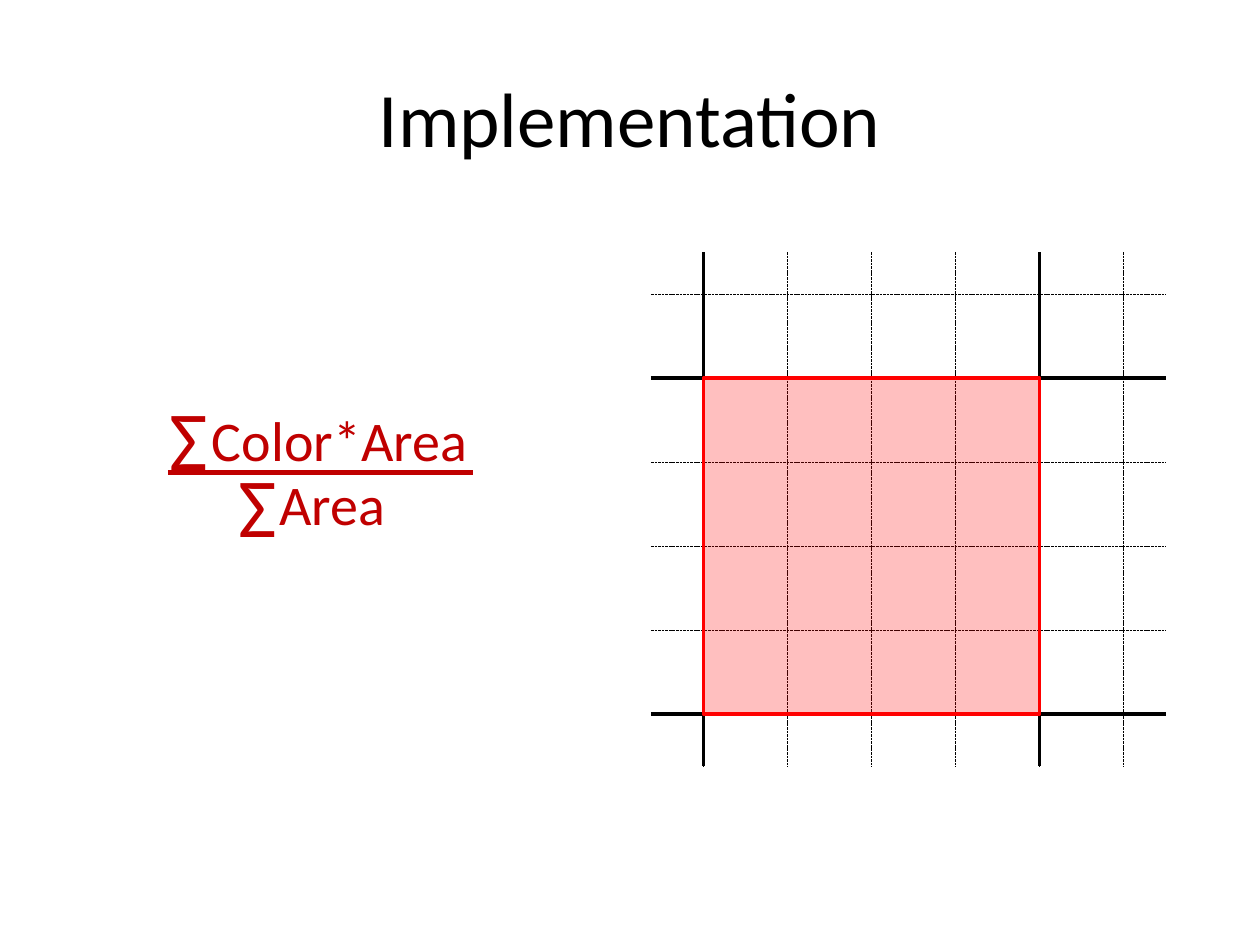
import pptx
import pptx.dml.color
import pptx.enum.dml
import pptx.enum.shapes
import pptx.enum.text
import pptx.oxml
import pptx.oxml.ns
import pptx.util

Pt = pptx.util.Pt
BLACK, RED, DARK_RED = "000000", "FF0000", "C00000"
LEFT, TOP, SPAN = 372, 144, 294
CELL, COUNT = 48, 6
FIRST_X, FIRST_Y = 402, 168
PIXEL_X, PIXEL_Y, PIXEL = FIRST_X, FIRST_Y + CELL, 4 * CELL


def paint(color, value):
    """Set a colour format from a hex string."""
    color.rgb = pptx.dml.color.RGBColor.from_string(value)


def write(tf, text, size=32, color=DARK_RED, align=None):
    """Write one formatted paragraph into a text frame."""
    p = tf.paragraphs[0]
    p.alignment = align
    r = p.add_run()
    r.text = text
    r.font.name = "Calibri"
    r.font.size = Pt(size)
    paint(r.font.color, color)


def add_title(s, text):
    """Place and format the slide title."""
    sp = s.shapes.title
    sp.left, sp.top, sp.width, sp.height = Pt(36), Pt(21.6), Pt(648), Pt(90)
    sp.text_frame.vertical_anchor = pptx.enum.text.MSO_ANCHOR.MIDDLE
    write(sp.text_frame, text, size=44, color=BLACK,
          align=pptx.enum.text.PP_ALIGN.CENTER)


def add_text(s, text, x, y, w, h, **fmt):
    """Add an unwrapped text box that fits its text."""
    tf = s.shapes.add_textbox(Pt(x), Pt(y), Pt(w), Pt(h)).text_frame
    tf.word_wrap = False
    tf.auto_size = pptx.enum.text.MSO_AUTO_SIZE.SHAPE_TO_FIT_TEXT
    write(tf, text, **fmt)


def add_line(shapes, x1, y1, x2, y2, color=BLACK, width=2, dash=None):
    """Add a straight line without a shadow."""
    line = shapes.add_connector(pptx.enum.shapes.MSO_CONNECTOR.STRAIGHT,
                                Pt(x1), Pt(y1), Pt(x2), Pt(y2))
    paint(line.line.color, color)
    line.line.width = Pt(width)
    if dash:
        line.line.dash_style = dash
    sp_pr = line._element.spPr
    sp_pr.append(pptx.oxml.parse_xml(
        "<a:effectLst %s/>" % pptx.oxml.ns.nsdecls("a")))


def add_grid(shapes, xs, ys, **fmt):
    """Add full-span lines at the given columns and rows."""
    for y in ys:
        add_line(shapes, LEFT, y, LEFT + SPAN, y, **fmt)
    for x in xs:
        add_line(shapes, x, TOP, x, TOP + SPAN, **fmt)


def add_pixel(s):
    """Add the translucent square that covers one pixel."""
    sp = s.shapes.add_shape(pptx.enum.shapes.MSO_SHAPE.RECTANGLE,
                            Pt(PIXEL_X), Pt(PIXEL_Y), Pt(PIXEL), Pt(PIXEL))
    sp.shadow.inherit = False
    sp.fill.solid()
    paint(sp.fill.fore_color, RED)
    clr = sp._element.spPr.find(".//" + pptx.oxml.ns.qn("a:srgbClr"))
    clr.append(pptx.oxml.parse_xml(
        '<a:alpha %s val="25000"/>' % pptx.oxml.ns.nsdecls("a")))
    paint(sp.line.color, RED)
    sp.line.width = Pt(2)


def add_formula(s):
    """Add the area-weighted colour average as a fraction."""
    add_line(s.shapes, 96, 270, 270, 270, color=DARK_RED, width=2.5)
    add_text(s, "Color*Area", 114, 228, 162, 46)
    add_text(s, "Σ", 90, 217.5, 36.5, 65.5, size=48)
    add_text(s, "Area", 152.5, 265, 75.5, 46)
    add_text(s, "Σ", 129, 255.5, 36.5, 65.5, size=48)


def main():
    """Build and save the slide."""
    prs = pptx.Presentation()
    prs.slide_width, prs.slide_height = Pt(720), Pt(540)
    s = prs.slides.add_slide(prs.slide_layouts[5])
    add_title(s, "Implementation")
    add_grid(s.shapes, (PIXEL_X, PIXEL_X + PIXEL), (PIXEL_Y, PIXEL_Y + PIXEL))
    add_grid(s.shapes.add_group_shape().shapes,
             [FIRST_X + CELL * i for i in range(COUNT)],
             [FIRST_Y + CELL * i for i in range(COUNT)],
             width=0.5, dash=pptx.enum.dml.MSO_LINE.SQUARE_DOT)
    add_pixel(s)
    add_formula(s)
    prs.save("out.pptx")


if __name__ == "__main__":
    main()
